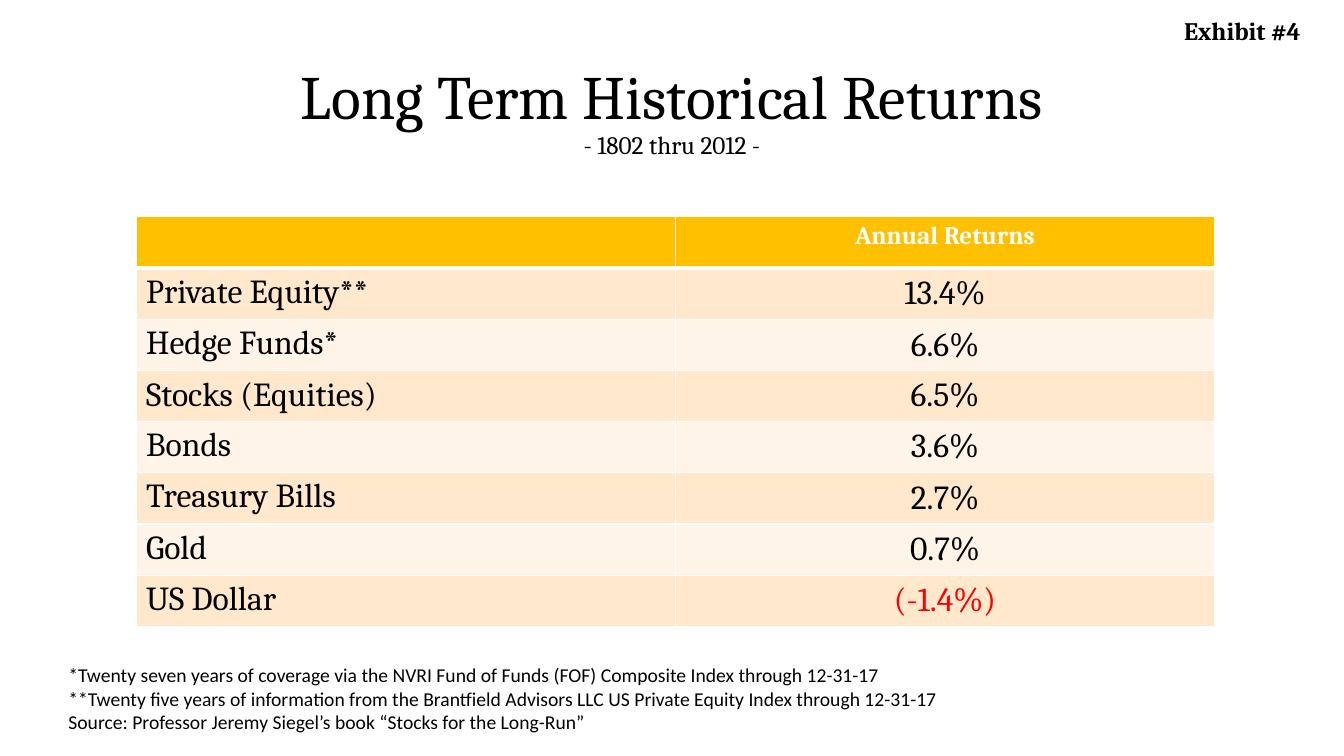
from dataclasses import dataclass

from lxml.etree import SubElement
from pptx import Presentation
from pptx.dml.color import RGBColor
from pptx.enum.text import MSO_ANCHOR, PP_ALIGN
from pptx.oxml.ns import qn
from pptx.util import Pt


@dataclass(frozen=True)
class Theme:
    heading_font: str = "Cambria"
    note_font: str = "Calibri"
    ink: str = "000000"
    white: str = "FFFFFF"
    negative: str = "FF0000"
    header_fill: str = "FFC000"
    bands: tuple = ("FFE8CC", "FFF4E7")
    title_size: int = 44
    body_size: int = 24
    label_size: int = 18
    note_size: int = 14


THEME = Theme()

RETURNS = [
    ("Private Equity**", "13.4%"),
    ("Hedge Funds*", "6.6%"),
    ("Stocks (Equities)", "6.5%"),
    ("Bonds", "3.6%"),
    ("Treasury Bills", "2.7%"),
    ("Gold", "0.7%"),
    ("US Dollar", "(-1.4%)"),
]
ROW_HEIGHTS = [36.7, 36.7, 36.7, 35, 36.7, 36.7, 36.7, 36.7]

FOOTNOTES = [
    "*Twenty seven years of coverage via the NVRI Fund of Funds (FOF) Composite Index through 12-31-17",
    "**Twenty five years of information from the Brantfield Advisors LLC US Private Equity Index through 12-31-17",
    "Source: Professor Jeremy Siegel’s book “Stocks for the Long-Run”",
]


def add_text(para, text, size=THEME.body_size, font=THEME.heading_font,
             color=THEME.ink, bold=False, align=PP_ALIGN.LEFT):
    para.alignment = align
    span = para.add_run()
    span.text = text
    span.font.size = Pt(size)
    span.font.name = font
    span.font.bold = bold
    span.font.color.rgb = RGBColor.from_string(color)


def add_frame(page, box, anchor=MSO_ANCHOR.TOP):
    frame = page.shapes.add_textbox(*(Pt(length) for length in box)).text_frame
    frame.word_wrap = True
    frame.vertical_anchor = anchor
    return frame


def set_borders(cell, top=1, bottom=1):
    """Draw white cell borders, with widths in points."""
    properties = cell._tc.get_or_add_tcPr()
    widths = {"a:lnL": 1, "a:lnR": 1, "a:lnT": top, "a:lnB": bottom}
    for tag, width in widths.items():
        line = SubElement(properties, qn(tag), w=str(Pt(width)))
        fill = SubElement(line, qn("a:solidFill"))
        SubElement(fill, qn("a:srgbClr"), val=THEME.white)


def add_title(page, box):
    para = add_frame(page, box, MSO_ANCHOR.MIDDLE).paragraphs[0]
    para.line_spacing = 0.9
    add_text(para, "Long Term Historical Returns", size=THEME.title_size,
             align=PP_ALIGN.CENTER)
    para.add_line_break()
    add_text(para, "- 1802 thru 2012 -", size=THEME.label_size,
             align=PP_ALIGN.CENTER)


def add_exhibit_label(page, box):
    add_text(add_frame(page, box).paragraphs[0], "Exhibit #4",
             size=THEME.label_size, bold=True)


def add_returns_table(page, box):
    left, top, width, height = (Pt(length) for length in box)
    table = page.shapes.add_table(len(RETURNS) + 1, 2, left, top, width, height).table
    table.horz_banding = False
    for row, row_height in zip(table.rows, ROW_HEIGHTS):
        row.height = Pt(row_height)

    # Borders come before the fill in a cell's properties
    for index, row in enumerate(table.rows):
        color = THEME.bands[(index - 1) % 2] if index else THEME.header_fill
        for cell in row.cells:
            set_borders(cell, top=3 if index == 1 else 1, bottom=1 if index else 3)
            cell.fill.solid()
            cell.fill.fore_color.rgb = RGBColor.from_string(color)

    # Header
    add_text(table.cell(0, 1).text_frame.paragraphs[0], "Annual Returns",
             size=THEME.label_size, color=THEME.white, bold=True,
             align=PP_ALIGN.CENTER)

    # Asset classes and their returns
    for index, (asset, value) in enumerate(RETURNS, start=1):
        add_text(table.cell(index, 0).text_frame.paragraphs[0], asset)
        value_cell = table.cell(index, 1)
        value_cell.vertical_anchor = MSO_ANCHOR.MIDDLE
        add_text(value_cell.text_frame.paragraphs[0], value,
                 color=THEME.negative if "-" in value else THEME.ink,
                 align=PP_ALIGN.CENTER)


def add_footnotes(page, box):
    frame = add_frame(page, box)
    for index, note in enumerate(FOOTNOTES):
        para = frame.add_paragraph() if index else frame.paragraphs[0]
        add_text(para, note, size=THEME.note_size, font=THEME.note_font)


def main():
    deck = Presentation()
    deck.slide_width, deck.slide_height = Pt(960), Pt(540)
    page = deck.slides.add_slide(deck.slide_layouts[6])
    add_title(page, (66, 28.75, 828, 104.4))
    add_returns_table(page, (97.2, 154.8, 770.4, sum(ROW_HEIGHTS)))
    add_exhibit_label(page, (838.8, 7.2, 131.8, 29.1))
    add_footnotes(page, (41.8, 470.2, 852.5, 58.3))
    deck.save("out.pptx")


if __name__ == "__main__":
    main()
